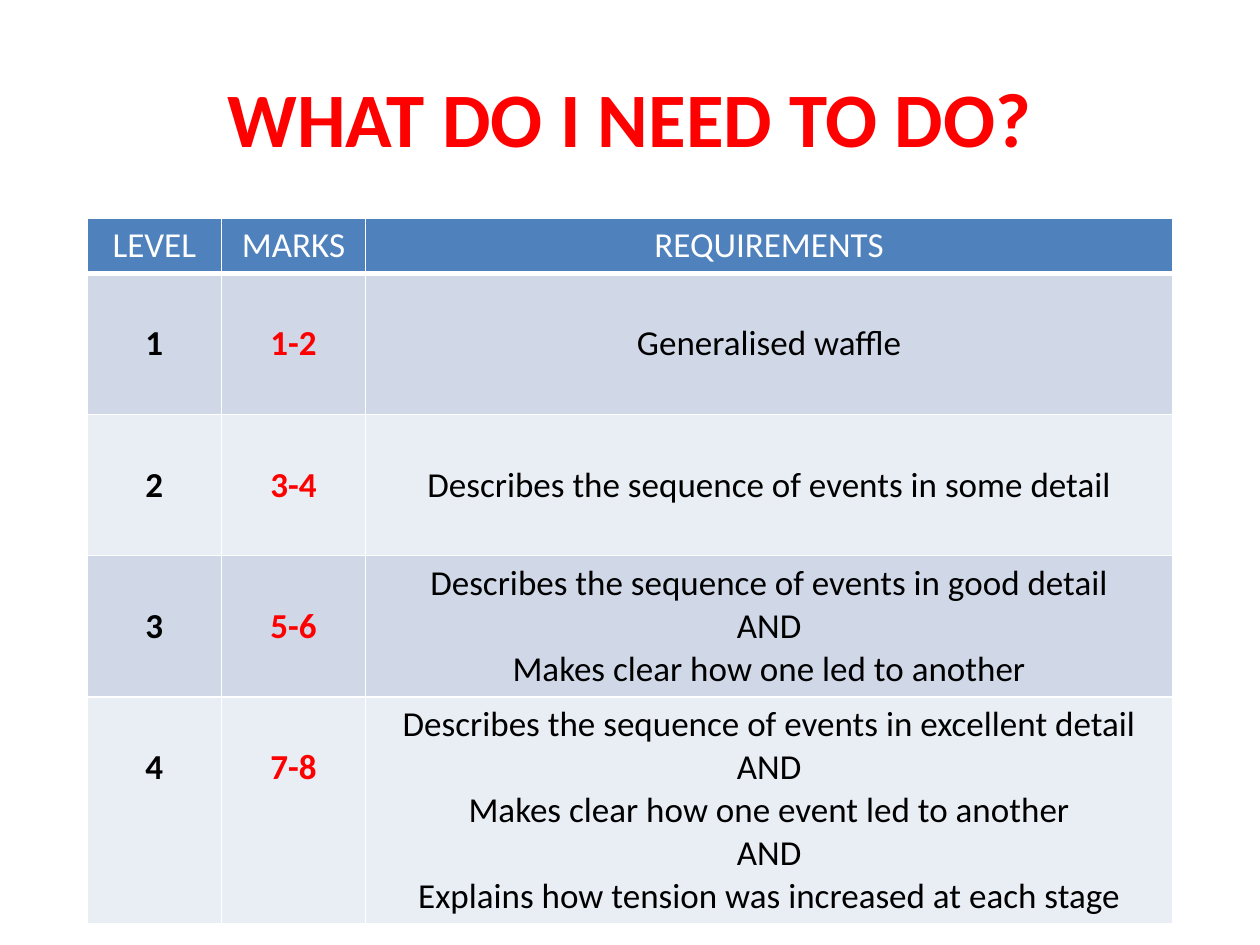
from lxml import etree
from pptx import Presentation
from pptx.dml.color import RGBColor
from pptx.enum.text import MSO_ANCHOR, PP_ALIGN
from pptx.oxml.ns import qn
from pptx.util import Inches, Pt

CENTER = PP_ALIGN.CENTER
MIDDLE, TOP = MSO_ANCHOR.MIDDLE, MSO_ANCHOR.TOP

FONT = "Calibri"
RED, BLACK, WHITE = "FF0000", "000000", "FFFFFF"
HEADER_FILL = "4F81BD"
BAND_FILLS = ("D0D8E8", "E9EDF4")

COLUMN_WIDTHS = (1.07, 1.14, 6.41)
ROW_HEIGHTS = (0.44, 1.12, 1.12, 1.12, 1.8)
LINE_HEIGHT = 0.34
CELL_MARGIN = 0.05

HEADERS = ("LEVEL", "MARKS", "REQUIREMENTS")
LEVELS = (
    ("1", "1-2", ["Generalised waffle"]),
    ("2", "3-4", ["Describes the sequence of events in some detail"]),
    ("3", "5-6", ["Describes the sequence of events in good detail",
                  "AND",
                  "Makes clear how one led to another"]),
    ("4", "7-8", ["Describes the sequence of events in excellent detail",
                  "AND",
                  "Makes clear how one event led to another",
                  "AND",
                  "Explains how tension was increased at each stage"]),
)


def color(hex_value):
    return RGBColor.from_string(hex_value)


def write_lines(text_frame, lines, size, text_color, bold=False):
    """Write each line as a centred paragraph with one run."""
    for index, line in enumerate(lines):
        paragraph = text_frame.paragraphs[0] if index == 0 else text_frame.add_paragraph()
        paragraph.alignment = CENTER
        run = paragraph.add_run()
        run.text = line
        run.font.name = FONT
        run.font.size = Pt(size)
        run.font.bold = bold
        run.font.color.rgb = color(text_color)


def set_borders(cell, bottom_width=1):
    """Draw white lines on the four sides of a cell."""
    properties = cell._tc.get_or_add_tcPr()
    for side, width in (("L", 1), ("R", 1), ("T", 1), ("B", bottom_width)):
        line = etree.SubElement(properties, qn(f"a:ln{side}"), w=str(Pt(width)))
        fill = etree.SubElement(line, qn("a:solidFill"))
        etree.SubElement(fill, qn("a:srgbClr"), val=WHITE)


def fill_cell(cell, lines, fill, text_color, bold=False, anchor=MIDDLE, bottom_width=1):
    set_borders(cell, bottom_width)
    cell.fill.solid()
    cell.fill.fore_color.rgb = color(fill)
    cell.vertical_anchor = anchor
    write_lines(cell.text_frame, lines, 20, text_color, bold)


def add_title(slide, text):
    title = slide.shapes.title
    title.left, title.top = Inches(0.5), Inches(0.3)
    title.width, title.height = Inches(9), Inches(1.25)
    title.text_frame.vertical_anchor = MIDDLE
    write_lines(title.text_frame, [text], 44, RED, bold=True)


def add_levels_table(slide):
    table = slide.shapes.add_table(
        len(ROW_HEIGHTS), len(COLUMN_WIDTHS), Inches(0.69), Inches(1.73),
        Inches(sum(COLUMN_WIDTHS)), Inches(sum(ROW_HEIGHTS))).table
    for column, width in zip(table.columns, COLUMN_WIDTHS):
        column.width = Inches(width)
    for row, height in zip(table.rows, ROW_HEIGHTS):
        row.height = Inches(height)

    # Header row
    for index, header in enumerate(HEADERS):
        fill_cell(table.cell(0, index), [header], HEADER_FILL, WHITE,
                  anchor=TOP, bottom_width=3)

    # One row for each level
    for index, (level, marks, requirements) in enumerate(LEVELS):
        fill = BAND_FILLS[index % 2]
        cells = table.rows[index + 1].cells
        fill_cell(cells[0], [level], fill, BLACK, bold=True)
        fill_cell(cells[1], [marks], fill, RED, bold=True)
        fill_cell(cells[2], requirements, fill, BLACK)

    # In the tall last row, level and marks stand on the second line
    for cell in list(table.rows[len(LEVELS)].cells)[:2]:
        cell.vertical_anchor = TOP
        cell.margin_top = Inches(CELL_MARGIN + LINE_HEIGHT)


def main():
    presentation = Presentation()
    presentation.slide_width, presentation.slide_height = Inches(10), Inches(7.5)
    slide = presentation.slides.add_slide(presentation.slide_layouts[5])
    add_title(slide, "WHAT DO I NEED TO DO?")
    add_levels_table(slide)
    presentation.save("out.pptx")


if __name__ == "__main__":
    main()
